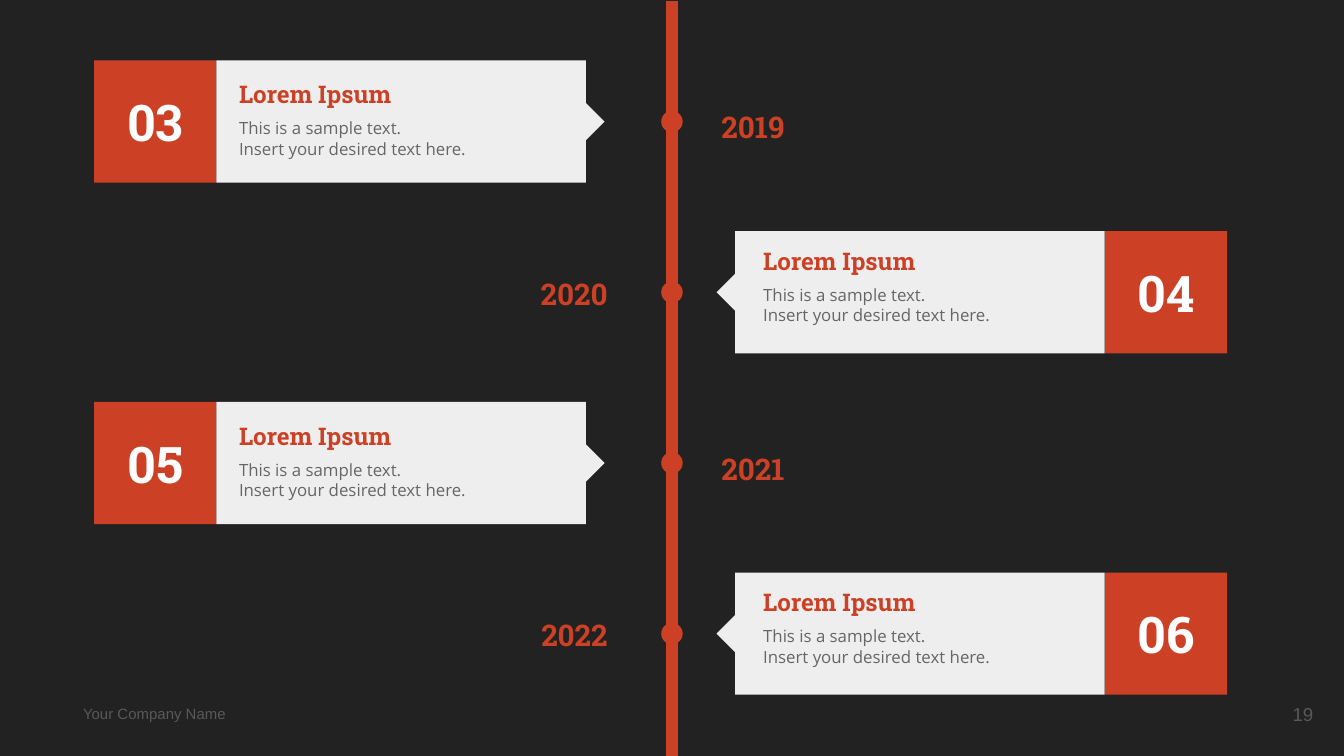
from lxml import etree
from pptx import Presentation, util as u
from pptx.dml.color import RGBColor
from pptx.enum import shapes, text
from pptx.oxml.ns import qn

RED = RGBColor(0xCC, 0x41, 0x25)
DARK = RGBColor(0x22, 0x22, 0x22)
PALE = RGBColor(0xEE, 0xEE, 0xEE)
WHITE = RGBColor(0xFF, 0xFF, 0xFF)
BODY_GREY = RGBColor(0x66, 0x66, 0x66)
FOOTER_GREY = RGBColor(0x59, 0x59, 0x59)
SLAB = "Roboto Slab"
LEFT, CENTER, RIGHT = text.PP_ALIGN.LEFT, text.PP_ALIGN.CENTER, text.PP_ALIGN.RIGHT

# Grid in inches: a 16:9 slide, four equal rows either side of a central axis
WIDTH = 10
HEIGHT = WIDTH * 9 / 16
AXIS = WIDTH / 2
FIRST_ROW, ROW_STEP = 0.45, 1.27
BADGE, PANEL = 0.91, 2.75
DOT, POINTER = 0.16, 0.21

MILESTONES = [("03", "2019"), ("04", "2020"), ("05", "2021"), ("06", "2022")]


def add_solid(parent, preset, left, top, width, height, color):
    solid = parent.shapes.add_shape(preset, *map(u.Inches, (left, top, width, height)))
    solid.shadow.inherit = False
    solid.fill.solid()
    solid.fill.fore_color.rgb = color
    solid.line.fill.background()
    return solid


def write(holder, lines, size, font, color, bold=False, align=LEFT):
    """Fill a shape with middle-anchored lines that share one style."""
    frame = holder.text_frame
    frame.word_wrap = True
    frame.vertical_anchor = text.MSO_ANCHOR.MIDDLE
    frame.margin_left = frame.margin_right = u.Inches(0.1)
    frame.margin_top = frame.margin_bottom = u.Inches(0.1)
    frame.text = lines
    for paragraph in frame.paragraphs:
        paragraph.alignment = align
        paragraph.font.size = u.Pt(size)
        paragraph.font.name = font
        paragraph.font.bold = bold
        paragraph.font.color.rgb = color


deck = Presentation()
deck.slide_width, deck.slide_height = u.Inches(WIDTH), u.Inches(HEIGHT)
slide = deck.slides.add_slide(deck.slide_layouts[6])
slide.background.fill.solid()
slide.background.fill.fore_color.rgb = DARK

company = slide.shapes.add_textbox(*map(u.Inches, (0.52, 5.18, 1.67, 0.26)))
write(company, "Your Company Name", 8, "Arial", FOOTER_GREY)

axis = slide.shapes.add_connector(
    shapes.MSO_CONNECTOR.STRAIGHT,
    *map(u.Inches, (AXIS, 0.01, AXIS, HEIGHT)))
axis.line.color.rgb = RED
axis.line.width = u.Pt(6)
etree.SubElement(axis._element.spPr, qn("a:effectLst"))

for row, (number, year) in enumerate(MILESTONES):
    top = FIRST_ROW + row * ROW_STEP
    middle = top + BADGE / 2
    if row % 2 == 0:
        badge_left, panel_left, pointer_center, turn = 0.7, 0.7 + BADGE, 4.35, 225
        text_left, text_top = 1.68, top + 0.17
        year_left, year_align = 5.27, LEFT
    else:
        badge_left, panel_left, pointer_center, turn = 5.47 + PANEL, 5.47, 5.48, 45
        text_left, text_top = 5.58, top + 0.14
        year_left, year_align = 3.72, RIGHT

    milestone = slide.shapes.add_group_shape()
    add_solid(milestone, shapes.MSO_SHAPE.OVAL,
              AXIS - DOT / 2, middle - DOT / 2, DOT, DOT, RED)
    badge = add_solid(milestone, shapes.MSO_SHAPE.RECTANGLE,
                      badge_left, top, BADGE, BADGE, RED)
    write(badge, number, 27, SLAB, WHITE, True, CENTER)
    add_solid(milestone, shapes.MSO_SHAPE.RECTANGLE, panel_left, top, PANEL, BADGE, PALE)
    pointer = add_solid(milestone, shapes.MSO_SHAPE.RIGHT_TRIANGLE,
                        pointer_center - POINTER / 2, middle - POINTER / 2,
                        POINTER, POINTER, PALE)
    pointer.rotation = turn

    for left, box_top, width, height, words, size, font, color, bold, align in [
        (text_left, text_top + 0.18, 2.51, 0.46,
         "This is a sample text.\nInsert your desired text here.",
         9, "Open Sans", BODY_GREY, False, LEFT),
        (text_left, text_top, 2.51, 0.16, "Lorem Ipsum", 13, SLAB, RED, True, LEFT),
        (year_left, text_top + 0.16, 0.9, 0.33, year, 16, SLAB, RED, True, year_align),
    ]:
        box = milestone.shapes.add_textbox(*map(u.Inches, (left, box_top, width, height)))
        write(box, words, size, font, color, bold, align)

page_number = slide.shapes.add_textbox(*map(u.Inches, (9.27, 5.1, 0.6, 0.43)))
write(page_number, "19", 10, "Arial", FOOTER_GREY, align=RIGHT)

deck.save("out.pptx")
